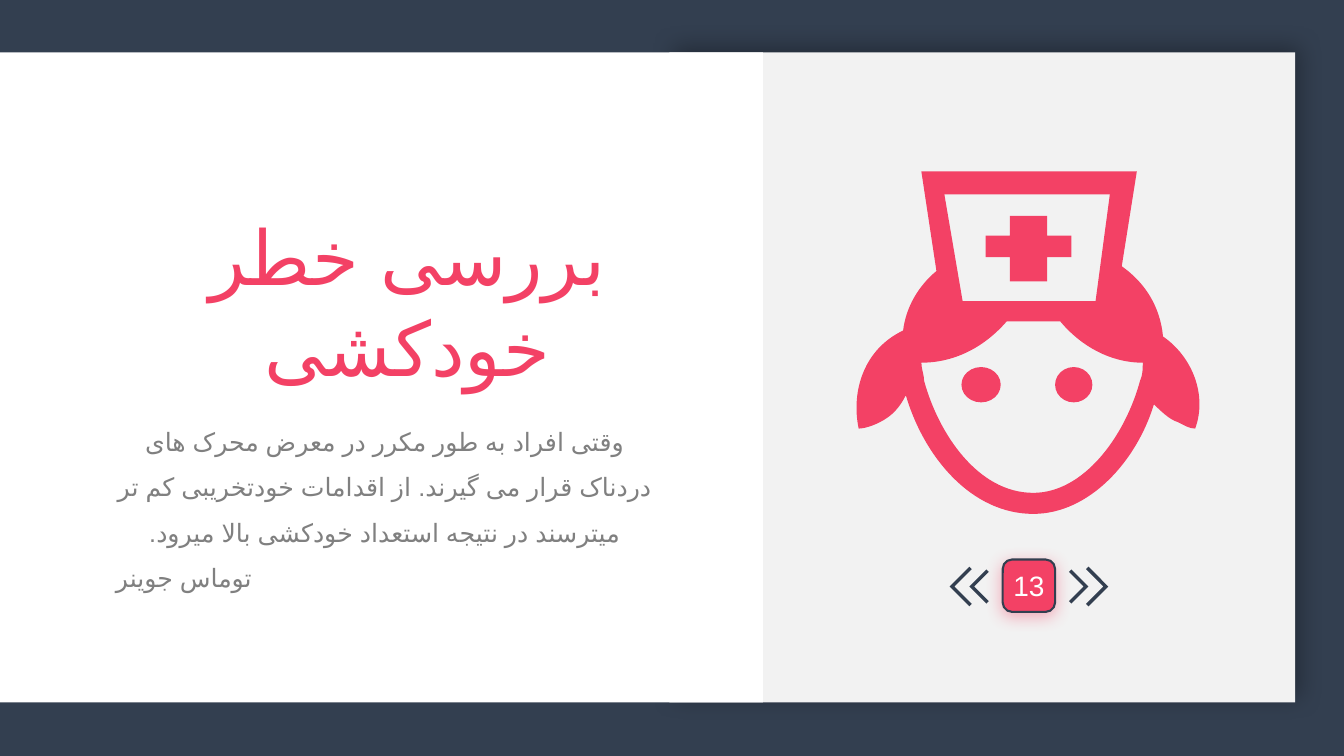
from lxml import etree
from pptx import Presentation
from pptx.dml.color import RGBColor
from pptx.enum.shapes import MSO_SHAPE as Preset
from pptx.enum.text import MSO_ANCHOR as Anchor, MSO_AUTO_SIZE as AutoSize, PP_ALIGN as Align
from pptx.oxml.ns import qn
from pptx.util import Cm, Pt

NAVY = RGBColor(0x33, 0x3F, 0x50)
PINK = RGBColor(0xF3, 0x41, 0x65)
PALE = RGBColor(0xF2, 0xF2, 0xF2)
WHITE = RGBColor(0xFF, 0xFF, 0xFF)
GREY = RGBColor(0x80, 0x80, 0x80)
BLACK = RGBColor(0, 0, 0)

# Contours in cm: a pair is a straight corner, six numbers are a Bezier curve
HEAD = [
    (29.31, 8.48), (29.24, 7.75, 28.88, 7.14, 28.27, 6.71),
    (28.65, 4.32), (23.22, 4.32), (23.60, 6.83),
    (23.14, 7.21, 22.83, 7.75, 22.76, 8.33),
    (21.79, 8.79, 21.44, 9.83, 21.64, 10.80),
    (21.79, 10.80, 22.02, 10.72, 22.17, 10.64),
    (22.48, 10.49, 22.68, 10.26, 22.83, 9.96),
    (23.29, 11.53, 24.49, 12.95, 26.04, 12.95),
    (27.46, 12.95, 28.65, 11.61, 29.08, 10.19),
    (29.24, 10.34, 29.46, 10.57, 29.69, 10.64),
    (29.85, 10.72, 29.97, 10.80, 30.12, 10.80),
    (30.43, 9.96, 30.05, 8.99, 29.31, 8.48),
]
HAT_OPENING = [(27.97, 4.90), (27.61, 7.59), (24.26, 7.59), (23.80, 4.90)]
FACE_OPENING = [
    (28.73, 9.60), (28.35, 11.00, 27.31, 12.42, 26.04, 12.42),
    (24.64, 12.42, 23.65, 10.92, 23.29, 9.60),
    (23.29, 9.45, 23.22, 9.30, 23.22, 9.14),
    (24.10, 9.14, 24.84, 8.71, 25.37, 8.10), (26.72, 8.10),
    (27.23, 8.71, 27.97, 9.14, 28.80, 9.14),
    (28.80, 9.30, 28.80, 9.45, 28.73, 9.60),
]
CROSS = [
    (25.45, 7.09), (26.39, 7.09), (26.39, 6.48), (27.00, 6.48),
    (27.00, 5.94), (26.39, 5.94), (26.39, 5.44), (25.45, 5.44),
    (25.45, 5.94), (24.84, 5.94), (24.84, 6.48), (25.45, 6.48),
]


def style_shape(shape, fill, line=None):
    shape.shadow.inherit = False
    shape.fill.solid()
    shape.fill.fore_color.rgb = fill
    if line is None:
        shape.line.fill.background()
    else:
        shape.line.color.rgb = line
        shape.line.width = Pt(1.5)


def add_preset(slide, preset, box, fill, line=None):
    shape = slide.shapes.add_shape(preset, *[Cm(length) for length in box])
    style_shape(shape, fill, line)
    return shape


def add_shadow(shape, color, opacity, blur, distance, angle):
    effects = shape._element.spPr.find(qn("a:effectLst"))
    shadow = etree.SubElement(
        effects, qn("a:outerShdw"), blurRad=str(Pt(blur)), dist=str(Pt(distance)),
        dir=str(angle * 60000), algn="ctr", rotWithShape="0")
    tint = etree.SubElement(shadow, qn("a:srgbClr"), val=str(color))
    etree.SubElement(tint, qn("a:alpha"), val=str(opacity * 1000))


def bend_segments(shape, items):
    """Turn the straight segments of curved items into Bezier segments."""
    nodes = list(shape._element.iter(qn("a:moveTo"), qn("a:lnTo")))
    for node, item in zip(nodes, items):
        if len(item) == 2:
            continue
        node.tag = qn("a:cubicBezTo")
        for index in (0, 1):
            x, y = item[2 * index:2 * index + 2]
            control = etree.Element(
                qn("a:pt"), x=str(Cm(x) - shape.left), y=str(Cm(y) - shape.top))
            node.insert(index, control)


def add_outline(slide, contours, fill):
    first, *others = [[(Cm(item[-2]), Cm(item[-1])) for item in contour]
                      for contour in contours]
    builder = slide.shapes.build_freeform(*first[0])
    builder.add_line_segments(first[1:], close=True)
    for points in others:
        builder.move_to(*points[0])
        builder.add_line_segments(points[1:], close=True)
    shape = builder.convert_to_shape()
    bend_segments(shape, [item for contour in contours for item in contour])
    style_shape(shape, fill)


def chevron(side, tip, half, thickness=0.12):
    """Chevron beside the page number; side is 1 for right and -1 for left."""
    back = tip - half
    end = half - thickness / 2
    corners = [(back, -half), (tip, 0), (back, half), (back - thickness / 2, end),
               (tip - thickness, 0), (back - thickness / 2, -end)]
    return [(25.93 + side * x, 14.78 + y) for x, y in corners]


def add_run(paragraph, text, size, color, language):
    run = paragraph.add_run()
    run.text = text
    for name, value in {"size": Pt(size), "name": "Arial"}.items():
        setattr(run.font, name, value)
    run.font.color.rgb = color
    properties = run._r.get_or_add_rPr()
    properties.set("lang", language)
    etree.SubElement(properties, qn("a:cs"), typeface="Arial")


def add_persian_text(slide, box, lines, size, color, spacing=None):
    frame = slide.shapes.add_textbox(*[Cm(length) for length in box]).text_frame
    for name, value in {"word_wrap": True, "auto_size": AutoSize.SHAPE_TO_FIT_TEXT}.items():
        setattr(frame, name, value)
    for index, (text, align) in enumerate(lines):
        paragraph = frame.add_paragraph() if index else frame.paragraphs[0]
        paragraph._p.get_or_add_pPr().set("rtl", "1")
        for name, value in {"alignment": align, "line_spacing": spacing}.items():
            setattr(paragraph, name, value)
        add_run(paragraph, text, size, color, "fa-IR")


def add_page_number(slide, number):
    badge = add_preset(slide, Preset.ROUNDED_RECTANGLE, (25.27, 14.1, 1.32, 1.32), PINK, NAVY)
    badge.adjustments[0] = 0.18
    add_shadow(badge, PINK, 41, 12, 3, 90)
    frame = badge.text_frame
    settings = {"margin_left": 0, "margin_right": 0, "vertical_anchor": Anchor.MIDDLE}
    for name, value in settings.items():
        setattr(frame, name, value)
    frame.paragraphs[0].alignment = Align.CENTER
    add_run(frame.paragraphs[0], number, 20, WHITE, "en-US")
    for side in (1, -1):
        add_outline(slide, [chevron(side, 2, 0.5), chevron(side, 1.5, 0.43)], NAVY)


def add_nurse(slide):
    for left, width in ((24.23, 0.99), (26.59, 0.94)):
        add_preset(slide, Preset.OVAL, (left, 9.25, width, 0.89), PINK)
    add_outline(slide, [CROSS], PINK)
    add_outline(slide, [HEAD, HAT_OPENING, FACE_OPENING], PINK)


def main():
    presentation = Presentation()
    presentation.slide_width = Cm(33.87)
    presentation.slide_height = Cm(19.05)
    slide = presentation.slides.add_slide(presentation.slide_layouts[6])
    slide.background.fill.solid()
    slide.background.fill.fore_color.rgb = NAVY

    # Panels
    panel = add_preset(slide, Preset.RECTANGLE, (16.87, 1.32, 15.77, 16.38), PALE)
    add_shadow(panel, BLACK, 30, 17, 5, 315)
    add_preset(slide, Preset.RECTANGLE, (0, 1.32, 19.23, 16.38), WHITE)

    # Title and quotation
    add_persian_text(slide, (2.03, 5.16, 16.48, 2.57),
                     [("بررسی خطر خودکشی", Align.CENTER)], 54, PINK)
    quotation = ("وقتی افراد به طور مکرر در معرض محرک های دردناک قرار می گیرند. "
                 "از اقدامات خودتخریبی کم تر میترسند در نتیجه استعداد خودکشی بالا میرود.")
    add_persian_text(slide, (2.67, 10.24, 14.05, 4.78),
                     [(quotation, Align.CENTER), ("توماس جوینر", None)], 18, GREY, 1.5)

    # Page number and nurse symbol
    add_page_number(slide, "13")
    add_nurse(slide)
    presentation.save("out.pptx")


if __name__ == "__main__":
    main()
